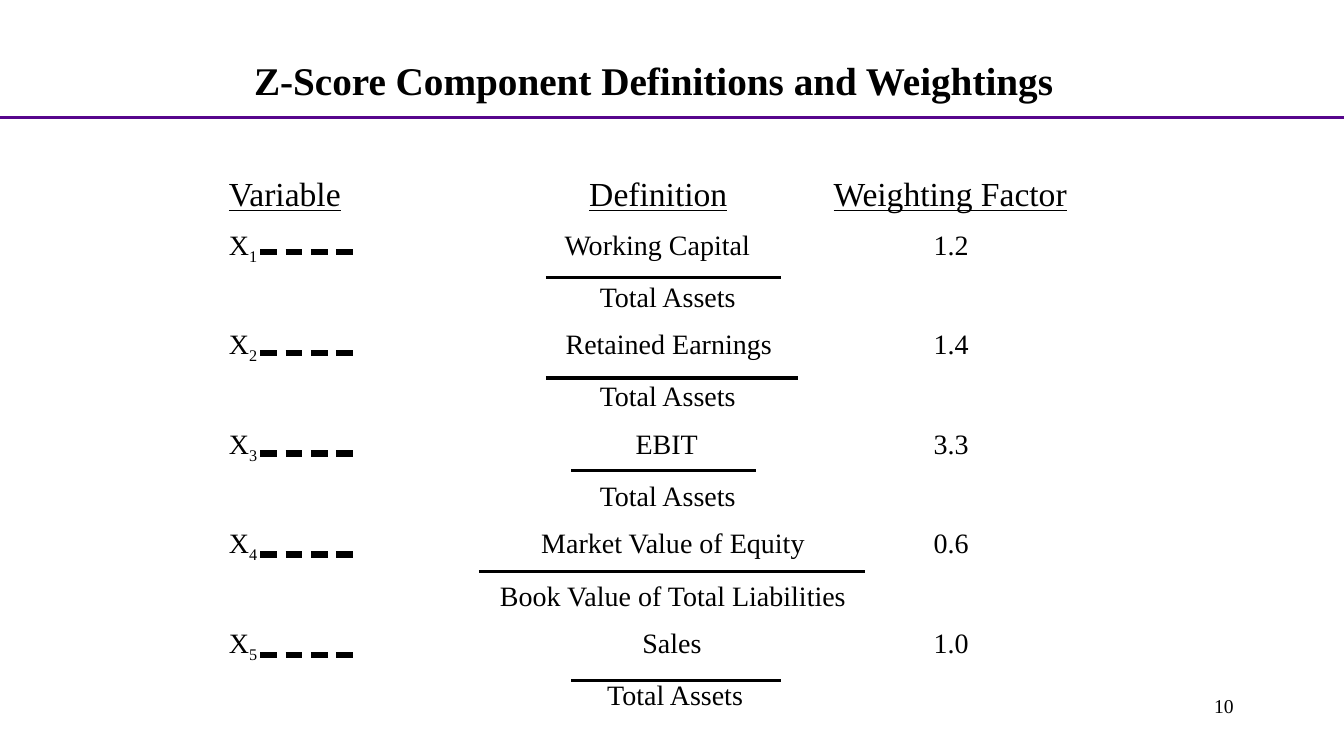
from dataclasses import dataclass

from lxml.etree import SubElement
from pptx import Presentation
from pptx.dml.color import RGBColor
from pptx.enum.shapes import MSO_CONNECTOR
from pptx.enum.text import MSO_ANCHOR, PP_ALIGN
from pptx.oxml.ns import qn
from pptx.slide import Slide
from pptx.text.text import TextFrame
from pptx.util import Emu, Pt


@dataclass(frozen=True)
class Theme:
    font: str = "Times New Roman"
    ink: RGBColor = RGBColor(0x00, 0x00, 0x00)
    accent: RGBColor = RGBColor(0x57, 0x06, 0x8C)
    title: int = 28
    header: int = 24
    body: int = 20
    page_number: int = 14
    row_gap: float = 9.9
    rule: float = 2.25
    dash: float = 4.5


@dataclass(frozen=True)
class Cell:
    text: str
    center: int


@dataclass(frozen=True)
class Component:
    numerator: Cell
    denominator: Cell
    weight: str
    bar_left: int
    bar_right: int
    bar_top: int


THEME = Theme()
SLIDE_WIDTH, SLIDE_HEIGHT = 1280, 720
TABLE_LEFT, TABLE_TOP, TABLE_WIDTH, TABLE_HEIGHT = 208, 160, 864, 528
INSET_X, INSET_Y = 10, 5
WEIGHT_CENTER = 906
DASH_LEFT, DASH_TOP, DASH_WIDTH, DASH_PITCH, DASH_COUNT = 248, 240, 16, 24, 4
ROW_PITCH = 96

HEADERS = ["Variable", "Definition", "Weighting Factor"]
HEADER_CENTERS = [627, 905]
COMPONENTS = [
    Component(Cell("Working Capital", 626), Cell("Total Assets", 636), "1.2", 520, 744, 264),
    Component(Cell("Retained Earnings", 637), Cell("Total Assets", 636), "1.4", 520, 760, 360),
    Component(Cell("EBIT", 635), Cell("Total Assets", 636), "3.3", 544, 720, 448),
    Component(Cell("Market Value of Equity", 641),
              Cell("Book Value of Total Liabilities", 641), "0.6", 456, 824, 544),
    Component(Cell("Sales", 640), Cell("Total Assets", 643), "1.0", 544, 744, 648),
]


def px(length: int) -> Emu:
    return Emu(length * 9525)


def add_rule(slide: Slide, left: int, right: int, top: int, color: RGBColor, width: float) -> None:
    connector = slide.shapes.add_connector(
        MSO_CONNECTOR.STRAIGHT, px(left), px(top), px(right), px(top))
    connector.line.color.rgb = color
    connector.line.width = Pt(width)
    SubElement(connector._element.spPr, qn("a:effectLst"))


def add_text_frame(slide: Slide, left: int, top: int, width: int, height: int) -> TextFrame:
    frame = slide.shapes.add_textbox(px(left), px(top), px(width), px(height)).text_frame
    frame.word_wrap = True
    frame.margin_left = frame.margin_right = px(INSET_X)
    frame.margin_top = frame.margin_bottom = px(INSET_Y)
    return frame


def style_paragraph(paragraph, size: int, bold: bool = False) -> None:
    font = paragraph.font
    font.name = THEME.font
    font.size = Pt(size)
    font.bold = bold
    font.color.rgb = THEME.ink


def add_run(paragraph, text: str, underline: bool = False, subscript: bool = False) -> None:
    run = paragraph.add_run()
    run.text = text
    if underline:
        run.font.underline = True
    if subscript:
        run._r.get_or_add_rPr().set("baseline", "-25000")


def start_row(frame: TextFrame, centers: list[int], size: int, first: bool = False):
    """Start a row whose columns are centred on tab stops."""
    paragraph = frame.paragraphs[0] if first else frame.add_paragraph()
    tab_list = SubElement(paragraph._p.get_or_add_pPr(), qn("a:tabLst"))
    for center in centers:
        position = px(center - TABLE_LEFT - INSET_X)
        SubElement(tab_list, qn("a:tab"), pos=str(position), algn="ctr")
    if not first:
        paragraph.space_before = Pt(THEME.row_gap)
    style_paragraph(paragraph, size)
    return paragraph


def add_component(slide: Slide, frame: TextFrame, index: int, component: Component) -> None:
    numerator, denominator = component.numerator, component.denominator
    paragraph = start_row(frame, [numerator.center, WEIGHT_CENTER], THEME.body)
    add_run(paragraph, "X")
    add_run(paragraph, str(index + 1), subscript=True)
    add_run(paragraph, f"\t{numerator.text}\t{component.weight}")
    paragraph = start_row(frame, [denominator.center], THEME.body)
    add_run(paragraph, f"\t{denominator.text}")

    add_rule(slide, component.bar_left, component.bar_right, component.bar_top,
             THEME.ink, THEME.rule)
    for dash in range(DASH_COUNT):
        left = DASH_LEFT + dash * DASH_PITCH
        add_rule(slide, left, left + DASH_WIDTH, DASH_TOP + index * ROW_PITCH,
                 THEME.ink, THEME.dash)


def main() -> None:
    presentation = Presentation()
    presentation.slide_width = px(SLIDE_WIDTH)
    presentation.slide_height = px(SLIDE_HEIGHT)
    slide = presentation.slides.add_slide(presentation.slide_layouts[6])

    # Title and rule
    add_rule(slide, 0, SLIDE_WIDTH, 112, THEME.accent, THEME.rule)
    title = add_text_frame(slide, 232, 40, 816, 72)
    title.vertical_anchor = MSO_ANCHOR.MIDDLE
    add_run(title.paragraphs[0], "Z-Score Component Definitions and Weightings")
    style_paragraph(title.paragraphs[0], THEME.title, bold=True)

    # Page number
    page_number = add_text_frame(slide, 918, 656, 267, 48).paragraphs[0]
    page_number.alignment = PP_ALIGN.RIGHT
    add_run(page_number, "10")
    style_paragraph(page_number, THEME.page_number)

    # Column headers
    frame = add_text_frame(slide, TABLE_LEFT, TABLE_TOP, TABLE_WIDTH, TABLE_HEIGHT)
    paragraph = start_row(frame, HEADER_CENTERS, THEME.header, first=True)
    for column, header in enumerate(HEADERS):
        if column:
            add_run(paragraph, "\t")
        add_run(paragraph, header, underline=True)

    # Ratios, fraction bars and dashes
    for index, component in enumerate(COMPONENTS):
        add_component(slide, frame, index, component)

    presentation.save("out.pptx")


if __name__ == "__main__":
    main()
